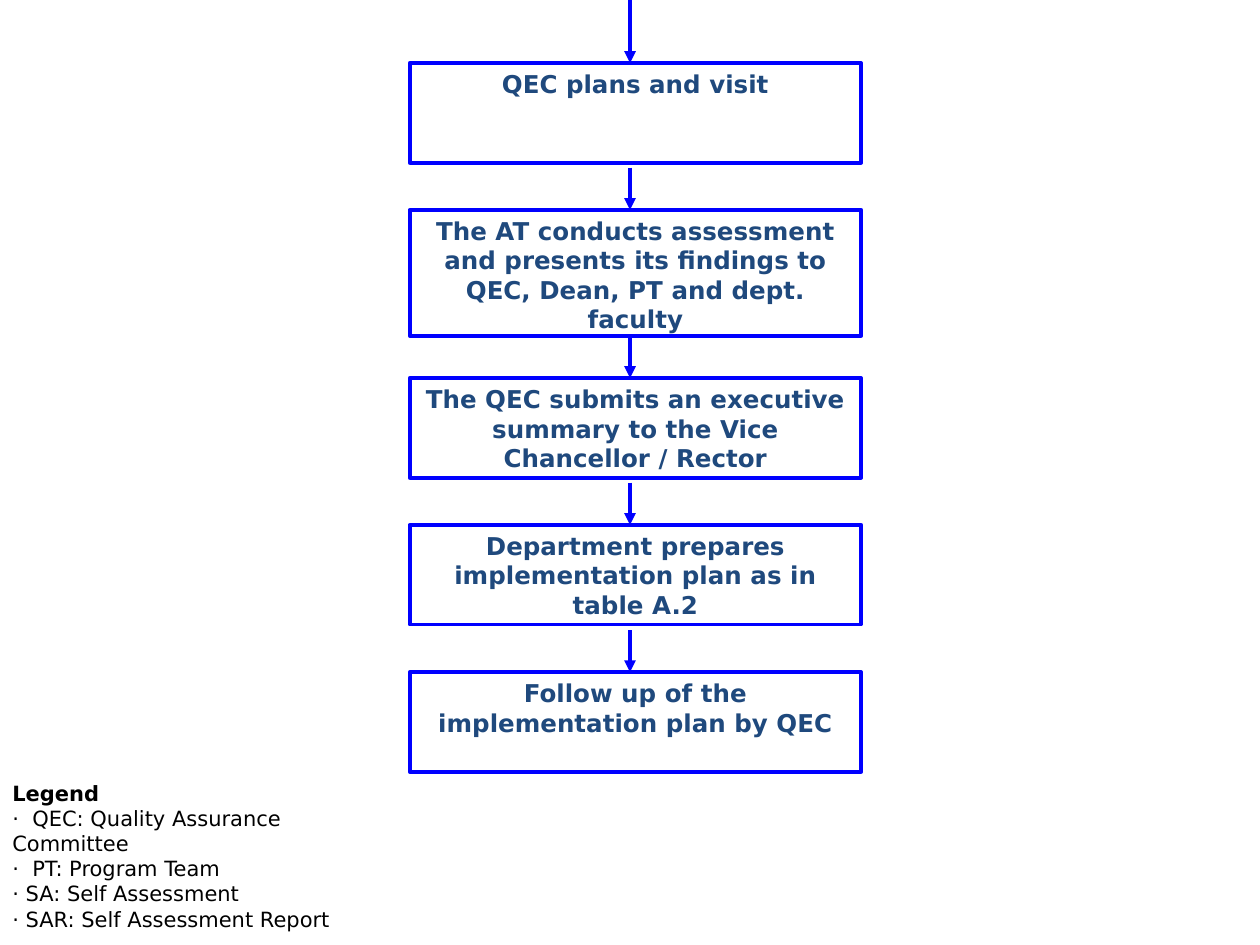
"""Build the quality assessment flowchart slide with its legend."""
from lxml.etree import SubElement
from pptx import Presentation
from pptx.dml.color import RGBColor
from pptx.enum.shapes import MSO_CONNECTOR as Line, MSO_SHAPE as Shape
from pptx.enum.text import MSO_ANCHOR as Anchor, PP_ALIGN as Align
from pptx.oxml.ns import qn
from pptx.util import Cm, Pt

COLORS = {"border": "0000FF", "step": "1F497D", "legend": "000000"}
FONT = "DejaVu Sans"


def add_run(paragraph, text, size, color, bold):
    run = paragraph.add_run()
    run.text = text
    run.font.name = FONT
    run.font.size = Pt(size)
    run.font.bold = bold
    run.font.color.rgb = RGBColor.from_string(COLORS[color])


deck = Presentation()
deck.slide_width, deck.slide_height = Cm(25.4), Cm(19.05)
slide = deck.slides.add_slide(deck.slide_layouts[6])

steps = [
    ("QEC plans and visit", 1.27, 2.01, 1.27),
    ("The AT conducts assessment and presents its findings to QEC, Dean, PT and dept. faculty",
     4.23, 2.54, 0.85),
    ("The QEC submits an executive summary to the Vice Chancellor / Rector", 7.62, 2.01, 0.85),
    ("Department prepares implementation plan as in table A.2", 10.58, 2.01, 0.85),
    ("Follow up of the implementation plan by QEC", 13.55, 2.01, 0.85),
]
for wording, top, height, arrow_length in steps:
    step = slide.shapes.add_shape(Shape.RECTANGLE, Cm(8.26), Cm(top), Cm(9.1), Cm(height))
    step.shadow.inherit = False
    step.fill.background()
    step.line.color.rgb = RGBColor.from_string(COLORS["border"])
    step.line.width = Pt(2.22)
    step.text_frame.word_wrap = True
    step.text_frame.vertical_anchor = Anchor.TOP
    caption = step.text_frame.paragraphs[0]
    caption.alignment = Align.CENTER
    add_run(caption, wording, 14, "step", True)

    arrow = slide.shapes.add_connector(
        Line.STRAIGHT, Cm(12.7), Cm(top - arrow_length), Cm(12.7), Cm(top))
    arrow.line.color.rgb = RGBColor.from_string(COLORS["border"])
    arrow.line.width = Pt(2.25)
    SubElement(arrow.line._get_or_add_ln(), qn("a:tailEnd"), type="triangle")
    SubElement(arrow._element.spPr, qn("a:effectLst"))

legend = slide.shapes.add_textbox(Cm(0), Cm(15.45), Cm(7.41), Cm(3.6)).text_frame
legend.word_wrap = False
legend.vertical_anchor = Anchor.MIDDLE
add_run(legend.paragraphs[0], "Legend", 12, "legend", True)
for entry in [
    "·  QEC: Quality Assurance Committee",
    "·  PT: Program Team",
    "· SA: Self Assessment",
    "· SAR: Self Assessment Report",
]:
    add_run(legend.add_paragraph(), entry, 12, "legend", False)

deck.save("out.pptx")
